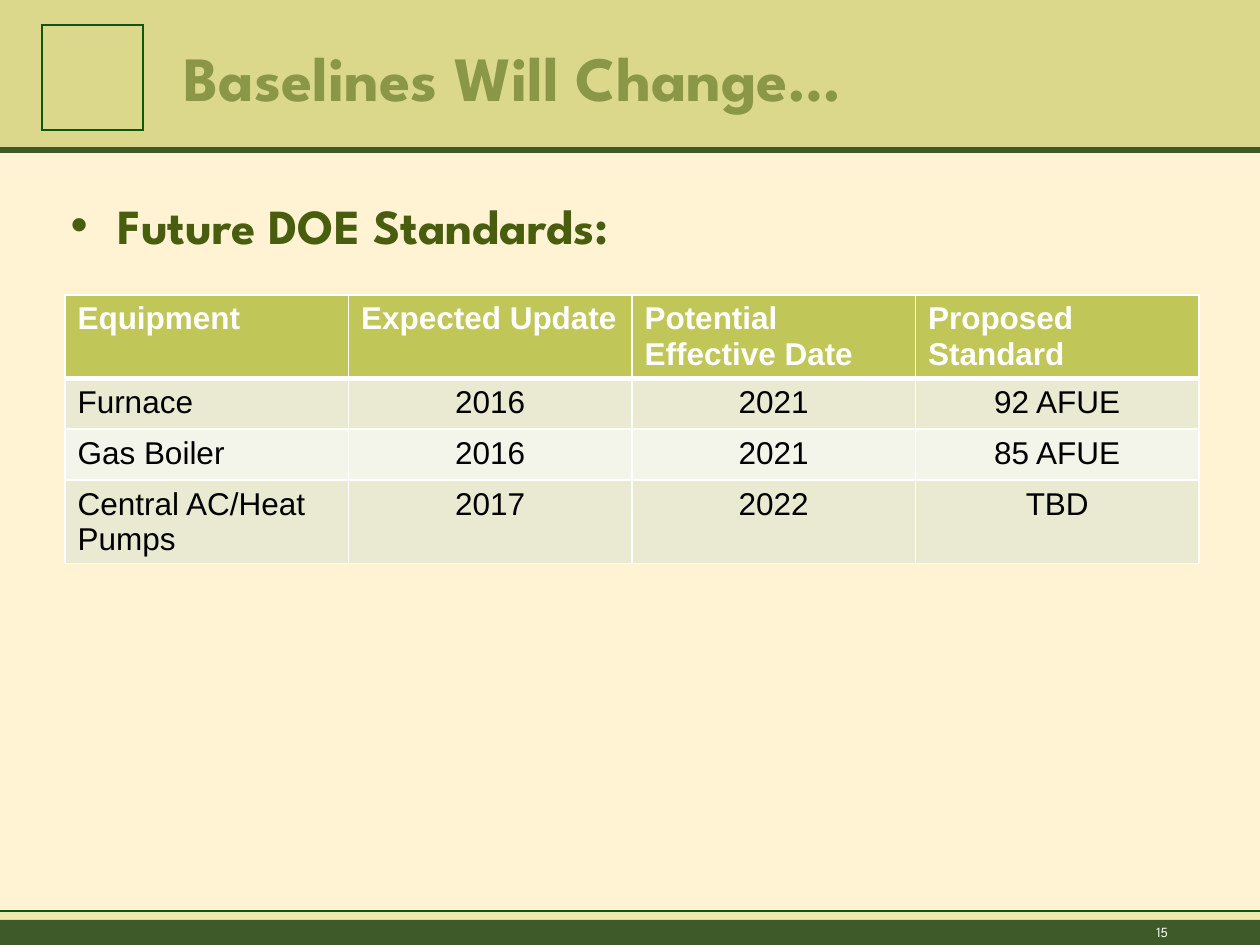
from lxml.etree import SubElement
from pptx import Presentation
from pptx.dml.color import RGBColor
from pptx.enum.shapes import MSO_CONNECTOR, MSO_SHAPE
from pptx.enum.text import MSO_ANCHOR, PP_ALIGN
from pptx.oxml.ns import qn
from pptx.util import Emu, Pt

CREAM = RGBColor(0xFF, 0xF3, 0xD3)
OLIVE = RGBColor(0xC1, 0xC6, 0x59)
LIME = RGBColor(0xCC, 0xCF, 0x6B)
FOREST = RGBColor(0x3F, 0x5A, 0x29)
PINE = RGBColor(0x0F, 0x56, 0x0E)
TITLE_GREEN = RGBColor(0x3D, 0x57, 0x2D)
HEADING_GREEN = RGBColor(0x48, 0x5D, 0x0E)
BAND_DARK = RGBColor(0xE9, 0xEA, 0xD1)
BAND_LIGHT = RGBColor(0xF4, 0xF5, 0xEA)
WHITE = RGBColor(0xFF, 0xFF, 0xFF)
BLACK = RGBColor(0x00, 0x00, 0x00)

DISPLAY_FONT = "League Spartan"
TABLE_FONT = "Arial"

TITLE = "Baselines Will Change…"
HEADING = "Future DOE Standards:"
PAGE_NUMBER = "15"
STANDARDS = [
    ("Equipment", "Expected Update", "Potential Effective Date", "Proposed Standard"),
    ("Furnace", "2016", "2021", "92 AFUE"),
    ("Gas Boiler", "2016", "2021", "85 AFUE"),
    ("Central AC/Heat Pumps", "2017", "2022", "TBD"),
]
BANDS = [
    ((0, 0, 1260, 149), OLIVE, 58),
    ((0, 920, 1260, 25), FOREST, 100),
    ((0, 911, 1260, 9), LIME, 33),
]
RULES = [(911, PINE, 0.75), (150, FOREST, 3)]


def px(length):
    return Emu(round(length * 914400 / 126))


def place(shape, bounds):
    shape.left, shape.top, shape.width, shape.height = map(px, bounds)


def write(frame, text, font, size, color, bold=False, align=PP_ALIGN.LEFT):
    frame.text = text
    paragraph = frame.paragraphs[0]
    paragraph.alignment = align
    paragraph.space_before = Pt(0)
    style = paragraph.runs[0].font
    style.name, style.size, style.bold = font, Pt(size), bold
    style.color.rgb = color


def add_band(page, bounds, color, opacity):
    band = page.shapes.add_shape(MSO_SHAPE.RECTANGLE, *map(px, bounds))
    band.shadow.inherit = False
    band.line.fill.background()
    band.fill.solid()
    band.fill.fore_color.rgb = color
    if opacity < 100:
        fill_color = band.fill._xPr.find(qn("a:solidFill"))[0]
        SubElement(fill_color, qn("a:alpha"), val=str(opacity * 1000))


def add_rule(page, y, color, width):
    rule = page.shapes.add_connector(MSO_CONNECTOR.STRAIGHT, 0, px(y), px(1260), px(y))
    rule.line.color.rgb = color
    rule.line.width = Pt(width)
    SubElement(rule._element.spPr, qn("a:effectLst"))


def set_borders(cell, color, widths):
    properties = cell._tc.get_or_add_tcPr()
    for position, (side, width) in enumerate(zip("LRTB", widths)):
        border = properties.makeelement(qn(f"a:ln{side}"), {"w": str(Pt(width))})
        fill = SubElement(border, qn("a:solidFill"))
        SubElement(fill, qn("a:srgbClr"), val=str(color))
        properties.insert(position, border)


def add_emblem_frame(page):
    table = page.shapes.add_table(1, 1, *map(px, (42, 25, 101, 105))).table
    cell = table.cell(0, 0)
    cell.fill.background()
    set_borders(cell, PINE, (1.5, 1.5, 1.5, 1.5))


def add_standards(page):
    rows, columns = len(STANDARDS), len(STANDARDS[0])
    bounds = (65, 295, 1134, 51 * rows)
    table = page.shapes.add_table(rows, columns, *map(px, bounds)).table
    for r, values in enumerate(STANDARDS):
        header = r == 0
        for c, value in enumerate(values):
            cell = table.cell(r, c)
            cell.fill.solid()
            cell.fill.fore_color.rgb = OLIVE if header else (BAND_LIGHT, BAND_DARK)[r % 2]
            set_borders(cell, WHITE, (1, 1, 3 if r == 1 else 1, 3 if header else 1))
            align = PP_ALIGN.LEFT if header or c == 0 else PP_ALIGN.CENTER
            write(cell.text_frame, value, TABLE_FONT, 18,
                  WHITE if header else BLACK, header, align)


def main():
    deck = Presentation()
    deck.slide_width, deck.slide_height = px(1260), px(945)
    page = deck.slides.add_slide(deck.slide_layouts[1])
    page.background.fill.solid()
    page.background.fill.fore_color.rgb = CREAM

    for band in BANDS:
        add_band(page, *band)
    for rule in RULES:
        add_rule(page, *rule)
    add_emblem_frame(page)

    title = page.shapes.title
    place(title, (171, 32, 1031, 89))
    title.text_frame.vertical_anchor = MSO_ANCHOR.MIDDLE
    write(title.text_frame, TITLE, DISPLAY_FONT, 36, TITLE_GREEN, True)

    add_standards(page)

    heading = page.placeholders[1]
    place(heading, (58, 180, 1135, 91))
    heading.text_frame.margin_top = px(15)
    properties = heading.text_frame.paragraphs[0]._p.get_or_add_pPr()
    properties.set("marL", "0")
    properties.set("indent", "0")
    SubElement(properties, qn("a:buNone"))
    write(heading.text_frame, HEADING, DISPLAY_FONT, 28, HEADING_GREEN, True)

    number = page.shapes.add_textbox(*map(px, (1144, 917, 112, 29)))
    number.text_frame.word_wrap = True
    write(number.text_frame, PAGE_NUMBER, DISPLAY_FONT, 8, WHITE)

    deck.save("out.pptx")


if __name__ == "__main__":
    main()
